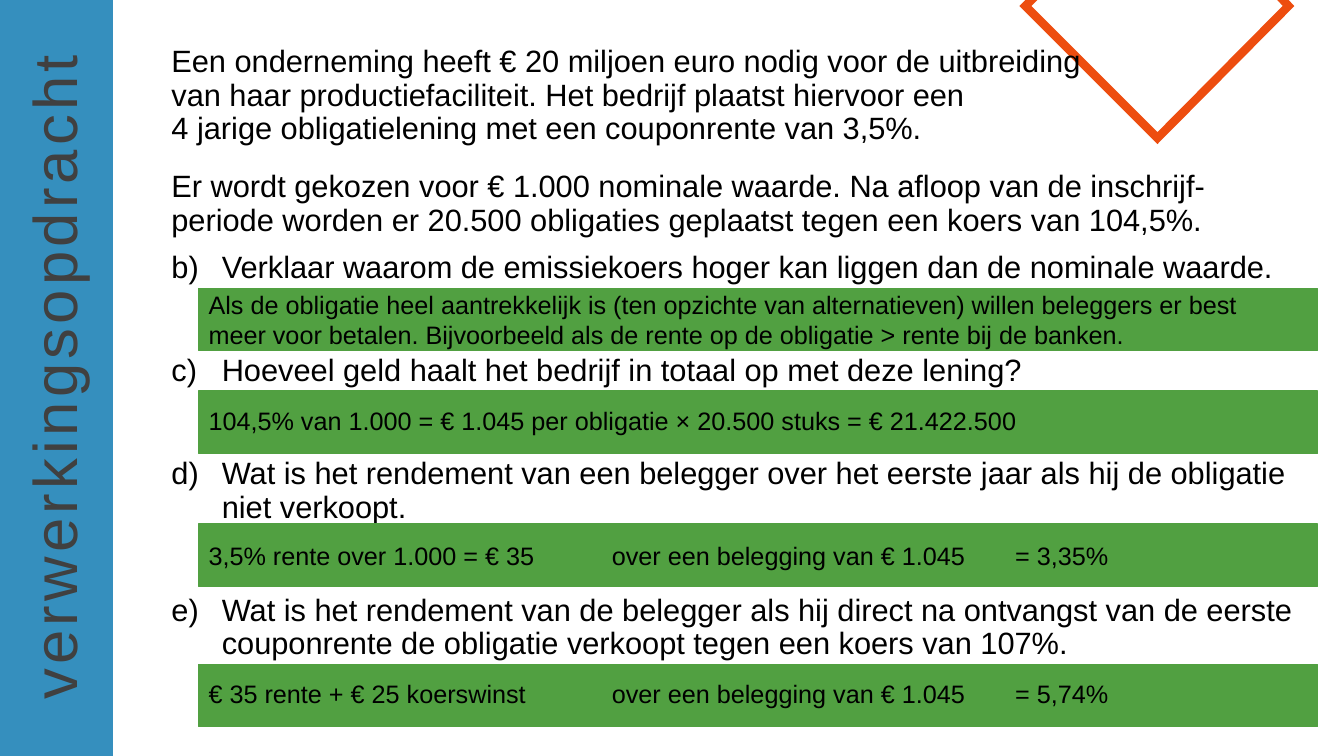
from lxml import etree
from pptx import Presentation
from pptx.dml.color import RGBColor
from pptx.enum import shapes, text
from pptx.oxml import ns
from pptx.util import Inches, Pt

BLUE = RGBColor(0x1A, 0x80, 0xB6)
GREEN = RGBColor(0x51, 0xA0, 0x41)
ORANGE = RGBColor(0xED, 0x4D, 0x0F)
GREY = RGBColor(0x40, 0x40, 0x40)
BLACK = RGBColor(0, 0, 0)

INTRO = [
    "Een onderneming heeft € 20 miljoen euro nodig voor de uitbreiding\v"
    "van haar productiefaciliteit. Het bedrijf plaatst hiervoor een\v"
    "4 jarige obligatielening met een couponrente van 3,5%.",
    "Er wordt gekozen voor € 1.000 nominale waarde. Na afloop van de inschrijf-periode "
    "worden er 20.500 obligaties geplaatst tegen een koers van 104,5%.",
]
QUESTIONS = [
    "Verklaar waarom de emissiekoers hoger kan liggen dan de nominale waarde.",
    "Hoeveel geld haalt het bedrijf in totaal op met deze lening?",
    "Wat is het rendement van een belegger over het eerste jaar als hij de obligatie "
    "niet verkoopt.",
    "Wat is het rendement van de belegger als hij direct na ontvangst van de eerste "
    "couponrente de obligatie verkoopt tegen een koers van 107%.",
]
# Band top, text top, text height, answer
ANSWERS = [
    (2.86, 2.82, 0.71,
     "Als de obligatie heel aantrekkelijk is (ten opzichte van alternatieven) willen "
     "beleggers er best meer voor betalen. Bijvoorbeeld als de rente op de obligatie > "
     "rente bij de banken."),
    (3.88, 3.97, 0.4,
     "104,5% van 1.000 = € 1.045 per obligatie × 20.500 stuks = € 21.422.500"),
    (5.2, 5.31, 0.4,
     "3,5% rente over 1.000 = € 35\tover een belegging van € 1.045\t= 3,35%"),
    (6.59, 6.68, 0.4,
     "€ 35 rente + € 25 koerswinst\tover een belegging van € 1.045\t= 5,74%"),
]
ANSWER_LEFT = 1.97
ANSWER_TABS = (4, 8)


def set_attributes(target, values):
    for name, value in values.items():
        setattr(target, name, value)


def add_child(parent, tag, **attributes):
    return etree.SubElement(parent, ns.qn(tag), attributes)


def place(shape, left, top, width, height):
    set_attributes(shape, {"left": Inches(left), "top": Inches(top),
                           "width": Inches(width), "height": Inches(height)})


def style_runs(paragraph, size, color):
    for run in paragraph.runs:
        set_attributes(run.font, {"name": "Arial", "size": Pt(size), "bold": False})
        run.font.color.rgb = color


def add_bar(slide, left, top, width, height, color):
    bar = slide.shapes.add_shape(shapes.MSO_SHAPE.RECTANGLE, Inches(left), Inches(top),
                                 Inches(width), Inches(height))
    bar.shadow.inherit = False
    bar.fill.solid()
    bar.fill.fore_color.rgb = color
    return bar


def add_corner_diamond(slide):
    corners = [(12.66, -0.07), (12.78, 0.06), (11.48, 1.37), (10.17, 0.06)]
    builder = slide.shapes.build_freeform(Inches(10.3), Inches(-0.07))
    builder.add_line_segments([(Inches(x), Inches(y)) for x, y in corners])
    diamond = builder.convert_to_shape()
    diamond.shadow.inherit = False
    diamond.fill.background()
    diamond.line.color.rgb = ORANGE
    diamond.line.width = Pt(6)
    add_child(diamond.line._get_or_add_ln(), "a:miter", lim="800000")


def add_sidebar(slide):
    bar = add_bar(slide, 0, -0.01, 1.12, 7.51, BLUE)
    bar.line.fill.background()
    color = next(bar.element.spPr.iter(ns.qn("a:srgbClr")))
    add_child(color, "a:alpha", val="88000")


def bring_to_front(shape):
    shape.element.getparent().append(shape.element)


def fill_title(title):
    bring_to_front(title)
    place(title, -2.83, 3.27, 6.7, 0.84)
    title.rotation = 270
    title.text_frame.text = "verwerkingsopdracht"
    set_attributes(title.text_frame, {"word_wrap": False,
                                      "auto_size": text.MSO_AUTO_SIZE.NONE,
                                      "vertical_anchor": text.MSO_ANCHOR.MIDDLE})
    heading = title.text_frame.paragraphs[0]
    heading.alignment = text.PP_ALIGN.LEFT
    style_runs(heading, 44, GREY)
    heading.runs[0].font._element.set("spc", "300")


def fill_assignment(body):
    """Write the introduction and the lettered questions, leaving gaps for the answers."""
    bring_to_front(body)
    place(body, 1.6, 0.41, 11.4, 6.8)
    frame = body.text_frame
    set_attributes(frame, {"auto_size": text.MSO_AUTO_SIZE.NONE, "word_wrap": True,
                           "vertical_anchor": text.MSO_ANCHOR.TOP})
    gaps = [0, 18, 10, 50, 50, 50]
    for index, (wording, gap) in enumerate(zip(INTRO + QUESTIONS, gaps)):
        paragraph = frame.add_paragraph() if index else frame.paragraphs[0]
        paragraph.text = wording
        set_attributes(paragraph, {"line_spacing": 0.9, "space_before": Pt(gap),
                                   "space_after": Pt(0)})
        properties = paragraph._p.get_or_add_pPr()
        is_question = index >= len(INTRO)
        indent = Inches(0.5) if is_question else 0
        properties.set("marL", str(indent))
        properties.set("indent", str(-indent))
        if is_question:
            add_child(properties, "a:buFont", typeface="+mj-lt")
            add_child(properties, "a:buAutoNum", type="alphaLcParenR", startAt="2")
        else:
            add_child(properties, "a:buNone")
        style_runs(paragraph, 22, BLACK)


def add_answer_band(slide, top):
    band = add_bar(slide, ANSWER_LEFT, top, 11.1, 0.62, GREEN)
    band.line.color.rgb = GREEN
    band.line.width = Pt(1)


def add_answer_text(slide, top, height, wording):
    answer = slide.shapes.add_textbox(Inches(ANSWER_LEFT), Inches(top),
                                      Inches(10.81), Inches(height))
    answer.text_frame.word_wrap = True
    paragraph = answer.text_frame.paragraphs[0]
    paragraph.text = wording
    if "\t" in wording:
        stops = add_child(paragraph._p.get_or_add_pPr(), "a:tabLst")
        for stop in ANSWER_TABS:
            add_child(stops, "a:tab", pos=str(Inches(stop)), algn="l")
    style_runs(paragraph, 18, BLACK)


def main():
    deck = Presentation()
    set_attributes(deck, {"slide_width": Inches(13.33), "slide_height": Inches(7.5)})
    slide = deck.slides.add_slide(deck.slide_layouts[1])
    add_corner_diamond(slide)
    add_sidebar(slide)
    fill_title(slide.shapes.title)
    fill_assignment(slide.placeholders[1])
    for band_top, text_top, height, wording in ANSWERS:
        add_answer_band(slide, band_top)
        add_answer_text(slide, text_top, height, wording)
    deck.save("out.pptx")


if __name__ == "__main__":
    main()
